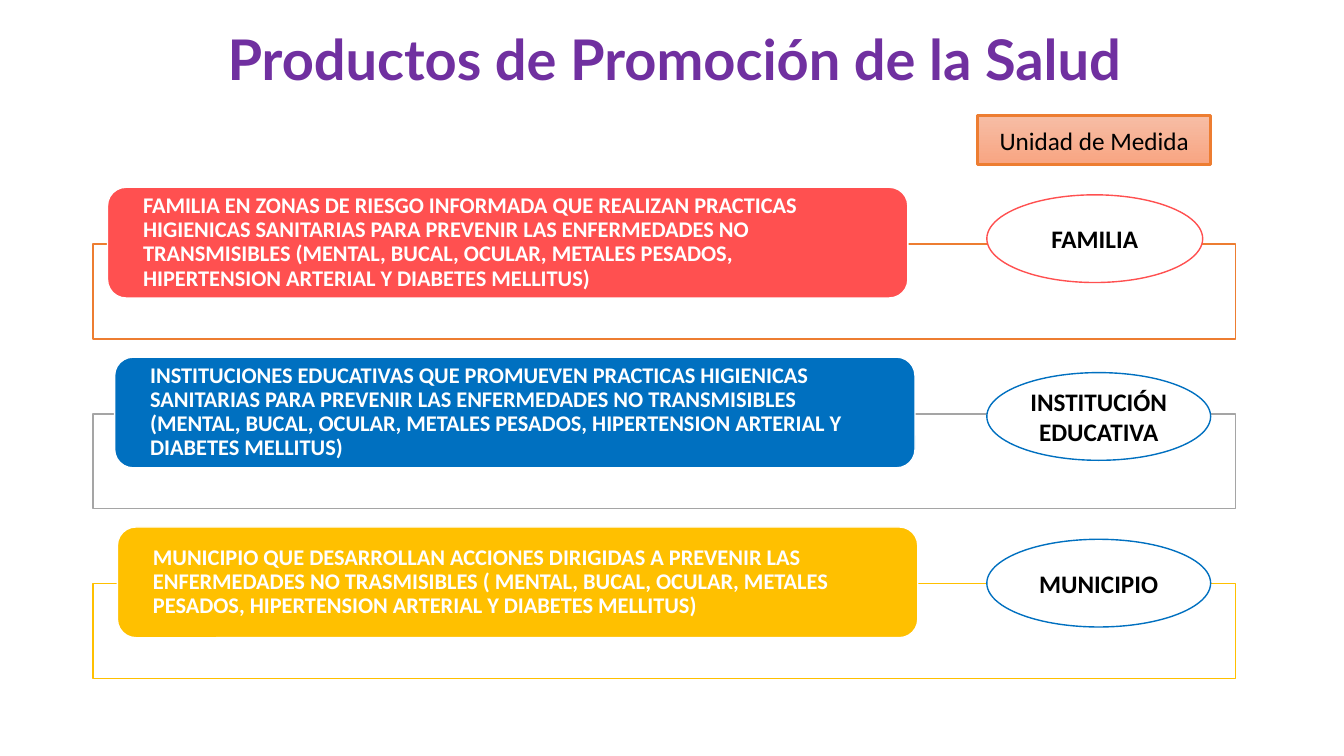
from pptx import Presentation
from pptx import util as u
from pptx.dml.color import RGBColor
from pptx.enum import shapes, text

SHAPE = shapes.MSO_SHAPE
ALIGN = text.PP_ALIGN

# Each product: description, unit, fill, frame line, unit line,
# pill offset, unit offset (x and y are relative to the frame), unit width
PRODUCTS = [
    ("FAMILIA EN ZONAS DE RIESGO INFORMADA QUE REALIZAN PRACTICAS HIGIENICAS "
     "SANITARIAS PARA PREVENIR LAS ENFERMEDADES NO TRANSMISIBLES (MENTAL, BUCAL, "
     "OCULAR, METALES PESADOS, HIPERTENSION ARTERIAL Y DIABETES MELLITUS)",
     "FAMILIA", "FF5050", "ED7D31", "FF5050", 0.37, -1.24, 5.44),
    ("INSTITUCIONES EDUCATIVAS QUE PROMUEVEN PRACTICAS HIGIENICAS SANITARIAS "
     "PARA PREVENIR LAS ENFERMEDADES NO TRANSMISIBLES (MENTAL, BUCAL, OCULAR, "
     "METALES PESADOS, HIPERTENSION ARTERIAL Y DIABETES MELLITUS)",
     "INSTITUCIÓN EDUCATIVA", "0070C0", "A5A5A5", "0070C0", 0.55, -1.04, 5.64),
    ("MUNICIPIO QUE DESARROLLAN ACCIONES DIRIGIDAS A PREVENIR LAS ENFERMEDADES "
     "NO TRASMISIBLES ( MENTAL, BUCAL, OCULAR, METALES PESADOS, HIPERTENSION "
     "ARTERIAL Y DIABETES MELLITUS)",
     "MUNICIPIO", "FFC000", "FFC000", "0070C0", 0.62, -1.12, 5.64),
]


def rgb(color):
    return RGBColor.from_string(color)


def write(sp, words, size=18, font="Calibri", color="000000", bold=True,
          align=ALIGN.CENTER, spacing=1.0, inset=None):
    tf = sp.text_frame
    tf.word_wrap = True
    tf.vertical_anchor = text.MSO_ANCHOR.MIDDLE
    if inset is not None:
        tf.margin_left = tf.margin_right = u.Cm(inset)
        tf.margin_top = tf.margin_bottom = 0
    p = tf.paragraphs[0]
    p.alignment = align
    p.line_spacing = spacing
    r = p.add_run()
    r.text = words
    r.font.size = u.Pt(size)
    r.font.name = font
    r.font.bold = bold
    r.font.color.rgb = rgb(color)


def add_box(slide, kind, box, line, fill="FFFFFF", width=1):
    sp = slide.shapes.add_shape(kind, *map(u.Cm, box))
    sp.shadow.inherit = False
    sp.fill.solid()
    sp.fill.fore_color.rgb = rgb(fill)
    sp.line.color.rgb = rgb(line)
    sp.line.width = u.Pt(width)
    return sp


def add_title(slide, box):
    sp = slide.shapes.add_textbox(*map(u.Cm, box))
    write(sp, "Productos de Promoción de la Salud", size=40, font="Lato",
          color="7030A0", spacing=0.9)


def add_unit_header(slide, box):
    sp = add_box(slide, SHAPE.RECTANGLE, box, "ED7D31", width=2.25)
    sp.fill.gradient()
    sp.fill.gradient_angle = 270
    for stop, color in zip(sp.fill.gradient_stops, ("F7BDA5", "F8A582")):
        stop.color.rgb = rgb(color)
    write(sp, "Unidad de Medida", bold=False)


def add_product(slide, box, product):
    words, unit, fill, frame_line, unit_line, pill_dx, unit_dy, unit_width = product
    left, top = box[:2]
    # Frame behind the row
    add_box(slide, SHAPE.RECTANGLE, box, frame_line)
    # Description
    pill = add_box(slide, SHAPE.ROUNDED_RECTANGLE,
                   (left + pill_dx, top - 1.43, 20.17, 2.79), "FFFFFF", fill)
    write(pill, words, size=16, color="FFFFFF", align=ALIGN.LEFT,
          spacing=0.9, inset=0.76)
    # Unit of measure
    oval = add_box(slide, SHAPE.OVAL,
                   (left + 22.53, top + unit_dy, unit_width, 2.21), unit_line)
    write(oval, unit)


def main():
    prs = Presentation()
    prs.slide_width, prs.slide_height = u.Cm(33.87), u.Cm(19.05)
    slide = prs.slides.add_slide(prs.slide_layouts[6])
    add_title(slide, (2.39, 0.25, 29.21, 2.67))
    for i, product in enumerate(PRODUCTS):
        add_product(slide, (2.34, 6.15 + 4.28 * i, 28.8, 2.39), product)
    add_unit_header(slide, (24.64, 2.92, 5.87, 1.22))
    prs.save("out.pptx")


if __name__ == "__main__":
    main()
